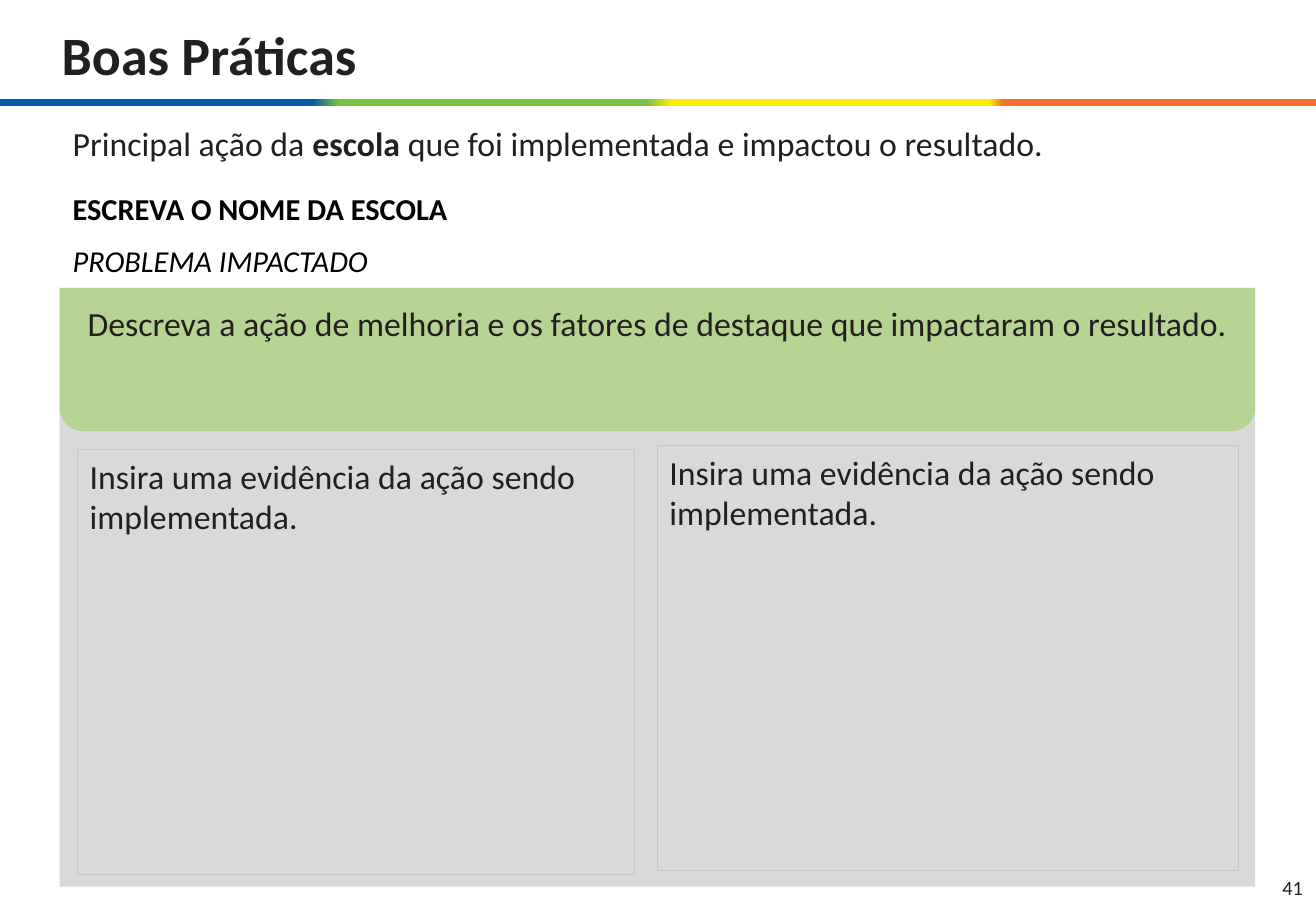
from lxml import etree
from pptx import Presentation
from pptx.dml.color import RGBColor
from pptx.enum.shapes import MSO_SHAPE as Preset
from pptx.enum.text import MSO_ANCHOR as Anchor, PP_ALIGN as Align
from pptx.oxml.ns import qn
from pptx.util import Inches, Pt

WIDTH, HEIGHT = 10.83, 7.5
LEFT, PANEL_WIDTH, PANEL_TOP = 0.49, 9.84, 2.37
ACTION_HEIGHT = 1.18
INK = RGBColor(0x23, 0x1F, 0x20)
BLACK = RGBColor(0, 0, 0)
GRAY = RGBColor(0xD9, 0xD9, 0xD9)
GREEN = RGBColor(0xB5, 0xD4, 0x94)
OUTLINE = RGBColor(0xCB, 0xC4, 0xC6)

BAND = [("0A5AAA", 0, 23.8), ("78C240", 25.8, 49.2),
        ("FFEA01", 51, 75.2), ("F37029", 76.2, 100)]

TEXTS = [
    ((0.41, 0.05, 8.46, 0.79), [("Boas Práticas", "b")], 32, INK, Align.LEFT, Anchor.MIDDLE),
    ((0.5, 0.96, PANEL_WIDTH, 0.5),
     [("Principal ação da ", ""), ("escola ", "b"),
      ("que foi implementada e impactou o resultado.", "")],
     20, INK, Align.JUSTIFY, Anchor.TOP),
    ((0.5, 1.52, PANEL_WIDTH, 0.39), [("ESCREVA O NOME DA ESCOLA", "b")],
     18, BLACK, Align.LEFT, Anchor.MIDDLE),
    ((0.5, 1.95, PANEL_WIDTH, 0.39), [("PROBLEMA IMPACTADO", "i")],
     18, BLACK, Align.LEFT, Anchor.MIDDLE),
    ((10.14, 7.11, 0.68, 0.39), [("41", "")], 12, INK, Align.RIGHT, Anchor.MIDDLE),
]
ACTION = "Descreva a ação de melhoria e os fatores de destaque que impactaram o resultado."
EVIDENCE = "Insira uma evidência da ação sendo implementada."
EVIDENCE_BOXES = [(0.64, 3.7, 4.58, 3.5), (5.41, 3.67, 4.78, 3.5)]


def write(shape, runs, size, color, align, anchor, inset=(0.1, 0.05)):
    frame = shape.text_frame
    frame.word_wrap = True
    frame.vertical_anchor = anchor
    frame.margin_left = frame.margin_right = Inches(inset[0])
    frame.margin_top = frame.margin_bottom = Inches(inset[1])
    paragraph = frame.paragraphs[0]
    paragraph.alignment = align
    for text, style in runs:
        run = paragraph.add_run()
        run.text = text
        font = run.font
        font.name, font.size = "Calibri", Pt(size)
        font.bold, font.italic = style == "b", style == "i"
        font.color.rgb = color


def add_block(slide, preset, box, fill=None, line=None):
    shape = slide.shapes.add_shape(preset, *map(Inches, box))
    shape.shadow.inherit = False
    if fill is None:
        shape.fill.background()
    else:
        shape.fill.solid()
        shape.fill.fore_color.rgb = fill
    if line is None:
        shape.line.fill.background()
    else:
        shape.line.color.rgb = line
        shape.line.width = Pt(0.75)
    return shape


def add_band(slide):
    band = add_block(slide, Preset.RECTANGLE, (0, 0.815, WIDTH, 0.06))
    band.fill.gradient()
    band.fill.gradient_angle = 0
    stops = band.element.spPr.find(qn("a:gradFill")).find(qn("a:gsLst"))
    for stop in list(stops):
        stops.remove(stop)
    for color, start, end in BAND:
        for position in (start, end):
            stop = etree.SubElement(stops, qn("a:gs"), pos=str(round(position * 1000)))
            etree.SubElement(stop, qn("a:srgbClr"), val=color)


def main():
    """Build the good practices slide."""
    presentation = Presentation()
    presentation.slide_width, presentation.slide_height = Inches(WIDTH), Inches(HEIGHT)
    slide = presentation.slides.add_slide(presentation.slide_layouts[6])
    add_band(slide)
    for box, *content in TEXTS:
        write(slide.shapes.add_textbox(*map(Inches, box)), *content)

    add_block(slide, Preset.RECTANGLE, (LEFT, PANEL_TOP, PANEL_WIDTH, 4.93), GRAY)
    action_box = (LEFT, PANEL_TOP, PANEL_WIDTH, ACTION_HEIGHT)
    action = add_block(slide, Preset.ROUND_2_SAME_RECTANGLE, action_box, GREEN)
    action.adjustments[0], action.adjustments[1] = 0, 0.167
    label = slide.shapes.add_textbox(*map(Inches, action_box))
    write(label, [(ACTION, "")], 20, INK, Align.CENTER, Anchor.TOP, (0.12, 0.12))

    for box in EVIDENCE_BOXES:
        shape = add_block(slide, Preset.RECTANGLE, box, line=OUTLINE)
        write(shape, [(EVIDENCE, "")], 20, INK, Align.LEFT, Anchor.TOP)
    presentation.save("out.pptx")


if __name__ == "__main__":
    main()
